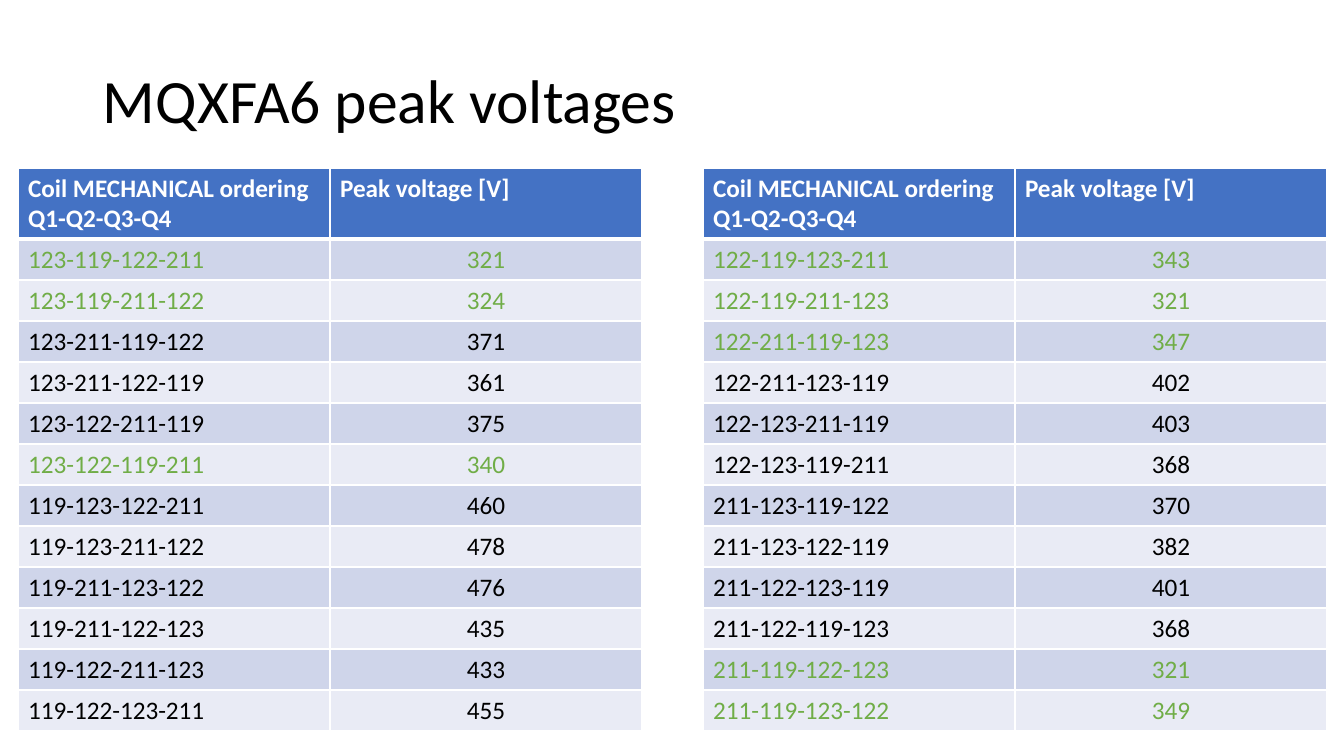
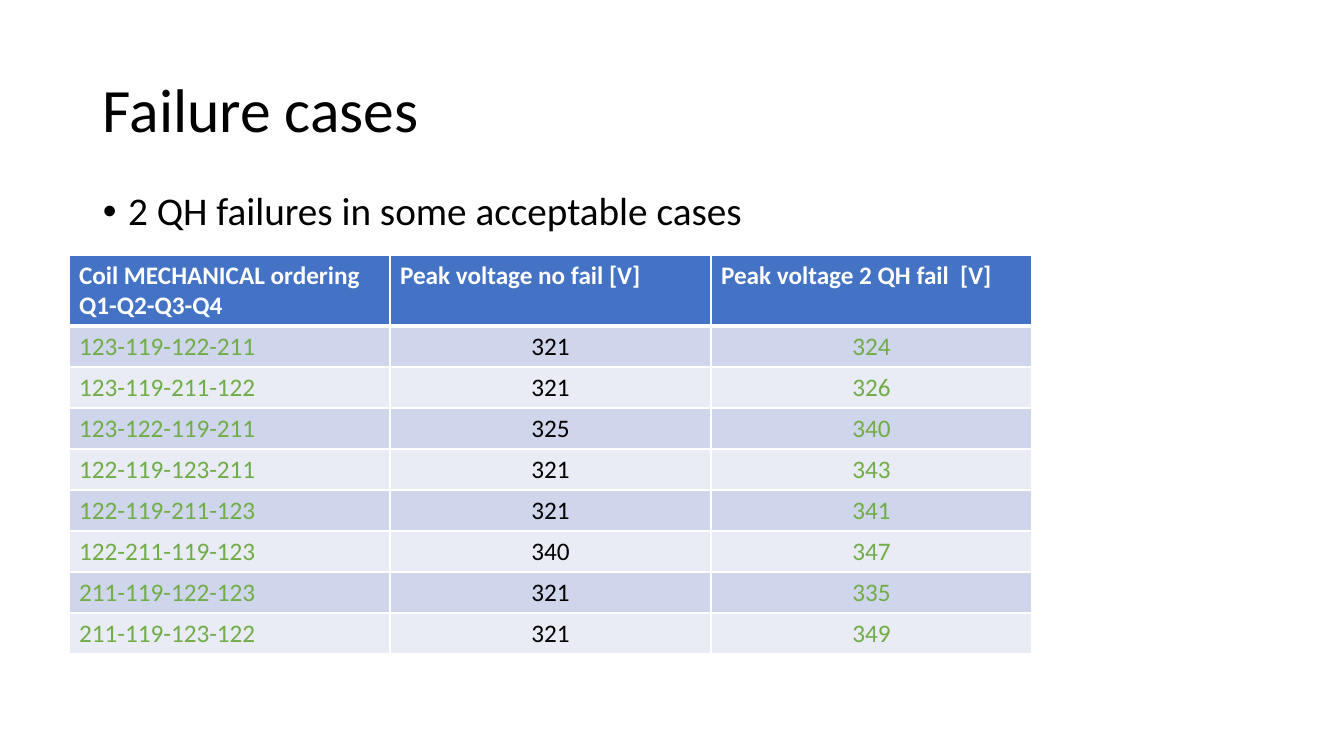
"""Build two slides of peak coil voltages for each mechanical coil ordering."""
from dataclasses import dataclass

from lxml import etree
from pptx import Presentation
from pptx import util as u
from pptx.dml.color import RGBColor
from pptx.enum import text
from pptx.oxml.ns import qn

EMU_PER_PX = 914400 / 100.8
FONT = "Calibri"
COLORS = {
    "text": "000000",
    "header_text": "FFFFFF",
    "acceptable": "70AD47",
    "header": "4472C4",
    "band_odd": "CFD5EA",
    "band_even": "E9EBF5",
    "grid": "FFFFFF",
}
ACCEPTABLE_BELOW = 350
TABLE_SIZE = 18
HEADER_HEIGHT, ROW_HEIGHT = 71, 41
TEXT_LEFT, TEXT_WIDTH, TITLE_HEIGHT = 93, 1159, 146
ORDERING = "Coil MECHANICAL ordering\nQ1-Q2-Q3-Q4"
PEAK = "Peak voltage [V]"


@dataclass(frozen=True)
class VoltageTable:
    left: int
    top: int
    column_width: int
    headings: tuple[str, ...]
    rows: tuple[tuple[str, ...], ...]


@dataclass(frozen=True)
class VoltageSlide:
    title: str
    title_top: int
    tables: tuple[VoltageTable, ...]
    bullet: str = ""


SLIDES = (
    VoltageSlide("MQXFA6 peak voltages", 31, (
        VoltageTable(18, 168, 312, (ORDERING, PEAK), (
            ("123-119-122-211", "321"),
            ("123-119-211-122", "324"),
            ("123-211-119-122", "371"),
            ("123-211-122-119", "361"),
            ("123-122-211-119", "375"),
            ("123-122-119-211", "340"),
            ("119-123-122-211", "460"),
            ("119-123-211-122", "478"),
            ("119-211-123-122", "476"),
            ("119-211-122-123", "435"),
            ("119-122-211-123", "433"),
            ("119-122-123-211", "455"),
        )),
        VoltageTable(703, 168, 312, (ORDERING, PEAK), (
            ("122-119-123-211", "343"),
            ("122-119-211-123", "321"),
            ("122-211-119-123", "347"),
            ("122-211-123-119", "402"),
            ("122-123-211-119", "403"),
            ("122-123-119-211", "368"),
            ("211-123-119-122", "370"),
            ("211-123-122-119", "382"),
            ("211-122-123-119", "401"),
            ("211-122-119-123", "368"),
            ("211-119-122-123", "321"),
            ("211-119-123-122", "349"),
        )),
    )),
    VoltageSlide("Failure cases", 40, (
        VoltageTable(69, 255, 321, (
            ORDERING, "Peak voltage no fail [V]", "Peak voltage 2 QH fail  [V]",
        ), (
            ("123-119-122-211", "321", "324"),
            ("123-119-211-122", "321", "326"),
            ("123-122-119-211", "325", "340"),
            ("122-119-123-211", "321", "343"),
            ("122-119-211-123", "321", "341"),
            ("122-211-119-123", "340", "347"),
            ("211-119-122-123", "321", "335"),
            ("211-119-123-122", "321", "349"),
        )),
    ), "2 QH failures in some acceptable cases"),
)


def px(length: int) -> u.Emu:
    return u.Emu(round(length * EMU_PER_PX))


def add_run(paragraph, wording: str, size: int, color: str, bold: bool = False) -> None:
    run = paragraph.add_run()
    run.text = wording
    run.font.name = FONT
    run.font.size = u.Pt(size)
    run.font.bold = bold
    run.font.color.rgb = RGBColor.from_string(COLORS[color])


def add_text(slide, wording: str, top: int, height: int, size: int, anchor):
    frame = slide.shapes.add_textbox(
        px(TEXT_LEFT), px(top), px(TEXT_WIDTH), px(height)).text_frame
    frame.word_wrap = True
    frame.vertical_anchor = anchor
    paragraph = frame.paragraphs[0]
    paragraph.line_spacing = 0.9
    add_run(paragraph, wording, size, "text")
    return paragraph


def add_bullet(paragraph) -> None:
    properties = paragraph._p.get_or_add_pPr()
    properties.set("marL", str(u.Inches(0.25)))
    properties.set("indent", str(-u.Inches(0.25)))
    etree.SubElement(properties, qn("a:buFont"), typeface="Arial")
    etree.SubElement(properties, qn("a:buChar"), char="•")


def set_borders(cell, top: int, bottom: int) -> None:
    properties = cell._tc.get_or_add_tcPr()
    for side, points in (("L", 1), ("R", 1), ("T", top), ("B", bottom)):
        line = etree.SubElement(properties, qn(f"a:ln{side}"), w=str(u.Pt(points)))
        fill = etree.SubElement(line, qn("a:solidFill"))
        etree.SubElement(fill, qn("a:srgbClr"), val=COLORS["grid"])


def style_cell(cell, row: int) -> None:
    set_borders(cell, 3 if row == 1 else 1, 3 if row == 0 else 1)
    band = "header" if row == 0 else "band_odd" if row % 2 else "band_even"
    cell.fill.solid()
    cell.fill.fore_color.rgb = RGBColor.from_string(COLORS[band])


def fill_heading(cell, wording: str) -> None:
    for index, line in enumerate(wording.split("\n")):
        frame = cell.text_frame
        paragraph = frame.add_paragraph() if index else frame.paragraphs[0]
        add_run(paragraph, line, TABLE_SIZE, "header_text", True)


def fill_value(cell, wording: str, column: int, color: str) -> None:
    cell.vertical_anchor = text.MSO_ANCHOR.MIDDLE
    paragraph = cell.text_frame.paragraphs[0]
    if column:
        cell.margin_left = cell.margin_right = cell.margin_top = px(1)
        cell.margin_bottom = 0
        paragraph.alignment = text.PP_ALIGN.CENTER
    add_run(paragraph, wording, TABLE_SIZE, color)


def add_voltage_table(slide, data: VoltageTable) -> None:
    columns = len(data.headings)
    height = HEADER_HEIGHT + ROW_HEIGHT * len(data.rows)
    table = slide.shapes.add_table(
        len(data.rows) + 1, columns, px(data.left), px(data.top),
        px(data.column_width * columns), px(height)).table
    for column, heading in enumerate(data.headings):
        table.columns[column].width = px(data.column_width)
        style_cell(table.cell(0, column), 0)
        fill_heading(table.cell(0, column), heading)
    table.rows[0].height = px(HEADER_HEIGHT)
    for row, values in enumerate(data.rows, start=1):
        table.rows[row].height = px(ROW_HEIGHT)
        verdict = "acceptable" if int(values[-1]) < ACCEPTABLE_BELOW else "text"
        for column, value in enumerate(values):
            cell = table.cell(row, column)
            style_cell(cell, row)
            judged = column in (0, columns - 1)
            fill_value(cell, value, column, verdict if judged else "text")


def main() -> None:
    deck = Presentation()
    deck.slide_width, deck.slide_height = px(1344), px(756)
    for content in SLIDES:
        slide = deck.slides.add_slide(deck.slide_layouts[6])
        add_text(slide, content.title, content.title_top, TITLE_HEIGHT, 44,
                 text.MSO_ANCHOR.MIDDLE)
        if content.bullet:
            add_bullet(add_text(slide, content.bullet, 187, 480, 28,
                                text.MSO_ANCHOR.TOP))
        for table in content.tables:
            add_voltage_table(slide, table)
    deck.save("out.pptx")


if __name__ == "__main__":
    main()
